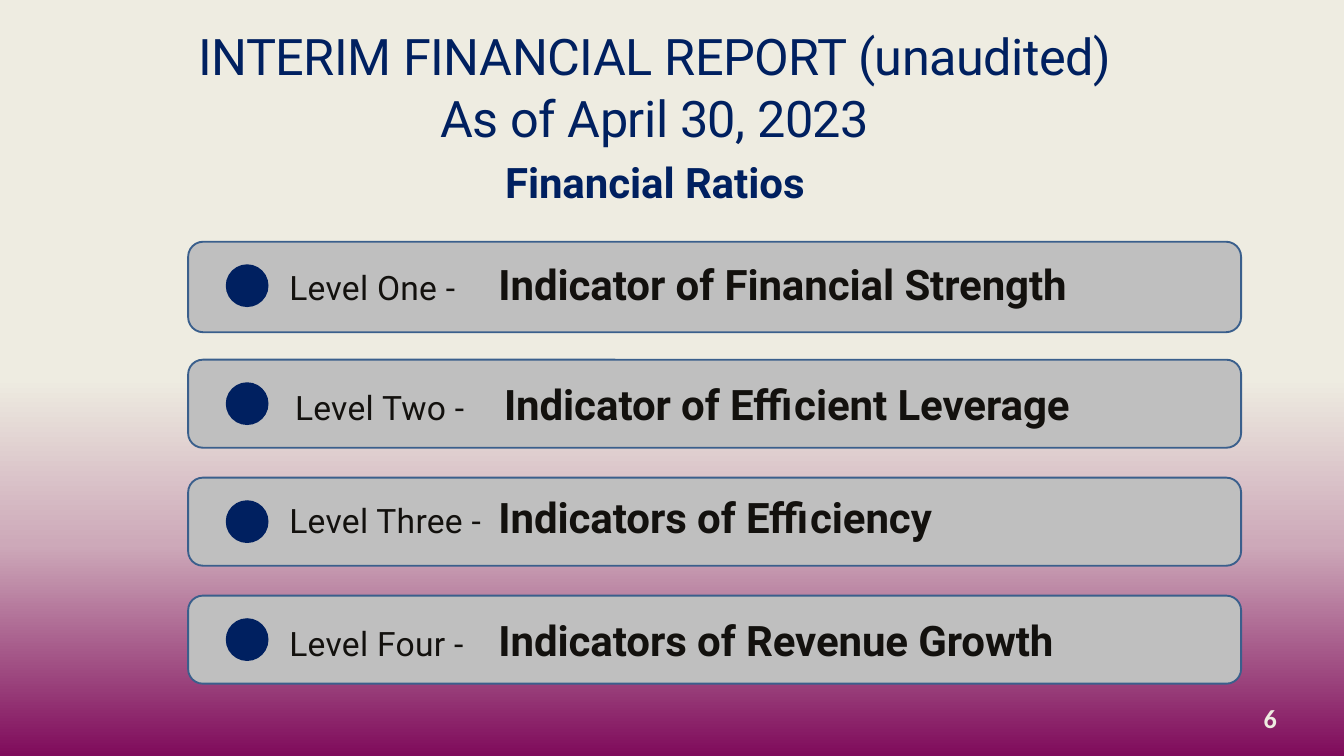
"""Build the Financial Ratios slide listing four levels of indicators."""
import copy

import pptx
import pptx.dml.color
import pptx.enum.shapes
import pptx.enum.text
import pptx.oxml.ns
import pptx.util
from lxml import etree

Pt = pptx.util.Pt
COLORS = {
    "navy": "002060",
    "cream": "EEECE1",
    "rose": "CDA9B9",
    "plum": "7F0B5B",
    "card": "BFBFBF",
    "outline": "3A5F8C",
    "ink": "13110E",
}


def rgb(name):
    return pptx.dml.color.RGBColor.from_string(COLORS[name])


def add_text_box(slide, left, top, width, height):
    frame = slide.shapes.add_textbox(Pt(left), Pt(top), Pt(width), Pt(height)).text_frame
    frame.word_wrap = True
    return frame


presentation = pptx.Presentation()
presentation.slide_width = Pt(1440)
presentation.slide_height = Pt(810)
slide = presentation.slides.add_slide(presentation.slide_layouts[6])

background = slide.background.fill
background.gradient()
background.gradient_angle = 270
stop_list = slide.element.find(".//" + pptx.oxml.ns.qn("a:gsLst"))
stop_list.append(copy.deepcopy(stop_list[-1]))
stops = [(0.5, "cream"), (0.72, "rose"), (1, "plum")]
for stop, (position, color) in zip(background.gradient_stops, stops):
    stop.position = position
    stop.color.rgb = rgb(color)

title = add_text_box(slide, 162, 26, 1079, 197)
title.margin_left = title.margin_top = title.margin_right = title.margin_bottom = 0
title_lines = [
    ("INTERIM FINANCIAL REPORT (unaudited)", 54, False, 66, -50),
    ("As of April 30, 2023", 54, False, 66, -50),
    ("Financial Ratios", 45, True, 64, -10),
]
for index, (text, size, bold, line_height, tracking) in enumerate(title_lines):
    paragraph = title.paragraphs[0] if index == 0 else title.add_paragraph()
    paragraph.alignment = pptx.enum.text.PP_ALIGN.CENTER
    paragraph.line_spacing = Pt(line_height)
    paragraph.font.name = "Roboto"
    paragraph.font.size = Pt(size)
    paragraph.font.bold = bold
    paragraph.font.color.rgb = rgb("navy")
    run = paragraph.add_run()
    run.text = text
    run.font._element.set("spc", str(tracking))

levels = [
    ("Level One -", "Indicator of Financial Strength", 303, 273, 97),
    ("Level Two -", "Indicator of Efficient Leverage", 309, 402.5, 94.3),
    ("Level Three -", "Indicators of Efficiency", 303, 522.7, 94.3),
    ("Level Four -", "Indicators of Revenue Growth", 303, 654.5, 94.3),
]
for index, (level, indicator, text_left, text_top, card_height) in enumerate(levels):
    card_top = 259 + 126.4 * index
    card = slide.shapes.add_shape(
        pptx.enum.shapes.MSO_SHAPE.ROUNDED_RECTANGLE,
        Pt(201.6), Pt(card_top), Pt(1128.2), Pt(card_height))
    card.shadow.inherit = False
    card.fill.solid()
    card.fill.fore_color.rgb = rgb("card")
    card.line.color.rgb = rgb("outline")
    card.line.width = Pt(2)

    dot = slide.shapes.add_shape(
        pptx.enum.shapes.MSO_SHAPE.OVAL,
        Pt(241.9), Pt(card_top + 24.2), Pt(45.8), Pt(45.8))
    dot.shadow.inherit = False
    dot.fill.solid()
    dot.fill.fore_color.rgb = rgb("navy")
    dot.line.fill.background()

    paragraph = add_text_box(slide, text_left, text_top, 962, 62).paragraphs[0]
    paragraph.space_before = Pt(5.8)
    properties = paragraph._p.get_or_add_pPr()
    tabs = etree.SubElement(properties, pptx.oxml.ns.qn("a:tabLst"))
    etree.SubElement(tabs, pptx.oxml.ns.qn("a:tab"), pos=str(Pt(224)), algn="l")
    paragraph.font.name = "Roboto"
    paragraph.font.color.rgb = rgb("ink")
    for text, size, bold, tracking in [(level + " \t", 36, False, 30), (indicator, 45, True, -10)]:
        run = paragraph.add_run()
        run.text = text
        run.font.size = Pt(size)
        run.font.bold = bold
        run.font._element.set("spc", str(tracking))

page_number = add_text_box(slide, 1338, 753, 30, 34)
page_number.margin_left = page_number.margin_top = 0
page_number.margin_right = page_number.margin_bottom = 0
paragraph = page_number.paragraphs[0]
paragraph.text = "6"
paragraph.alignment = pptx.enum.text.PP_ALIGN.RIGHT
paragraph.font.name = "Calibri"
paragraph.font.size = Pt(28)
paragraph.font.bold = True
paragraph.font.color.rgb = rgb("cream")

presentation.save("out.pptx")
